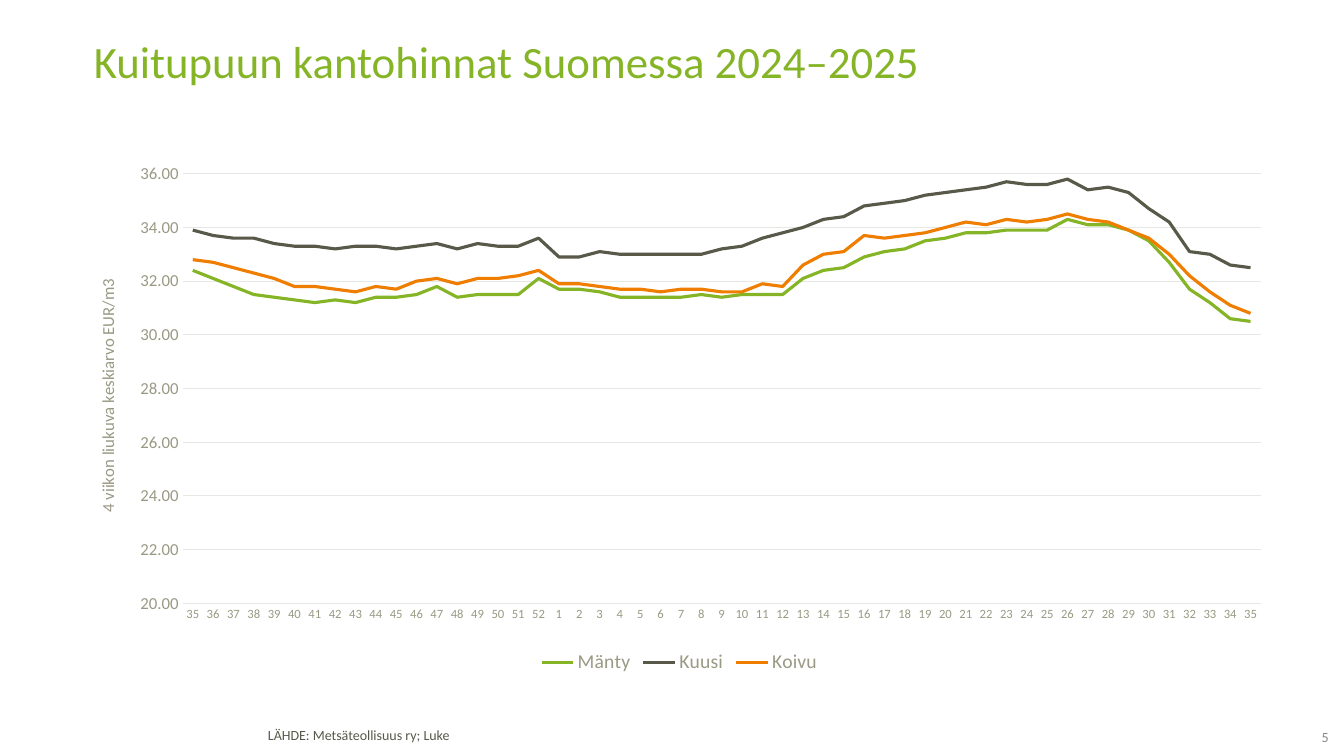
from lxml import etree
from pptx import Presentation
from pptx.chart.data import CategoryChartData
from pptx.dml.color import RGBColor
from pptx.enum.chart import XL_CHART_TYPE, XL_LEGEND_POSITION, XL_TICK_MARK
from pptx.enum.text import MSO_ANCHOR, PP_ALIGN
from pptx.oxml.ns import qn
from pptx.util import Pt

LINE_CHART = XL_CHART_TYPE.LINE
LEGEND_BOTTOM = XL_LEGEND_POSITION.BOTTOM
NO_TICKS = XL_TICK_MARK.NONE
TOP, MIDDLE = MSO_ANCHOR.TOP, MSO_ANCHOR.MIDDLE
LEFT, RIGHT = PP_ALIGN.LEFT, PP_ALIGN.RIGHT

GREEN, DARK, ORANGE = "85B526", "59594A", "EF7D00"
MUTED, GRID, GREY = "999984", "E7E7E3", "878787"

# Weekly prices, from week 35 of 2024 to week 35 of 2025
WEEKS = [str(week) for week in (*range(35, 53), *range(1, 36))]
PRICES = {
    "Mänty": (GREEN, [
        32.4, 32.1, 31.8, 31.5, 31.4, 31.3, 31.2, 31.3, 31.2, 31.4, 31.4, 31.5,
        31.8, 31.4, 31.5, 31.5, 31.5, 32.1, 31.7, 31.7, 31.6, 31.4, 31.4, 31.4,
        31.4, 31.5, 31.4, 31.5, 31.5, 31.5, 32.1, 32.4, 32.5, 32.9, 33.1, 33.2,
        33.5, 33.6, 33.8, 33.8, 33.9, 33.9, 33.9, 34.3, 34.1, 34.1, 33.9, 33.5,
        32.7, 31.7, 31.2, 30.6, 30.5]),
    "Kuusi": (DARK, [
        33.9, 33.7, 33.6, 33.6, 33.4, 33.3, 33.3, 33.2, 33.3, 33.3, 33.2, 33.3,
        33.4, 33.2, 33.4, 33.3, 33.3, 33.6, 32.9, 32.9, 33.1, 33, 33, 33,
        33, 33, 33.2, 33.3, 33.6, 33.8, 34, 34.3, 34.4, 34.8, 34.9, 35,
        35.2, 35.3, 35.4, 35.5, 35.7, 35.6, 35.6, 35.8, 35.4, 35.5, 35.3, 34.7,
        34.2, 33.1, 33, 32.6, 32.5]),
    "Koivu": (ORANGE, [
        32.8, 32.7, 32.5, 32.3, 32.1, 31.8, 31.8, 31.7, 31.6, 31.8, 31.7, 32,
        32.1, 31.9, 32.1, 32.1, 32.2, 32.4, 31.9, 31.9, 31.8, 31.7, 31.7, 31.6,
        31.7, 31.7, 31.6, 31.6, 31.9, 31.8, 32.6, 33, 33.1, 33.7, 33.6, 33.7,
        33.8, 34, 34.2, 34.1, 34.3, 34.2, 34.3, 34.5, 34.3, 34.2, 33.9, 33.6,
        33, 32.2, 31.6, 31.1, 30.8]),
}


def color(hex_value):
    return RGBColor.from_string(hex_value)


def set_layout(parent, index, **values):
    """Give a chart part a manual layout, in fractions of the chart."""
    for old_layout in parent.findall(qn("c:layout")):
        parent.remove(old_layout)
    layout = etree.Element(qn("c:layout"))
    manual = etree.SubElement(layout, qn("c:manualLayout"))
    for name, value in values.items():
        etree.SubElement(manual, qn(f"c:{name}")).set("val", str(value))
    parent.insert(index, layout)


class SlideBuilder:
    font_name = "Calibri"

    def __init__(self, slide):
        self.slide = slide

    def style_font(self, font, size, hex_value):
        font.name = self.font_name
        font.size = Pt(size)
        font.bold = False
        font.color.rgb = color(hex_value)

    def style_line(self, line, width, hex_value):
        line.color.rgb = color(hex_value)
        line.width = Pt(width)

    def fill_text(self, shape, text, size, hex_value, align=LEFT, anchor=TOP,
                  spacing=1.0, insets=(7.2, 3.6, 7.2, 3.6)):
        frame = shape.text_frame
        frame.text = text
        frame.word_wrap = True
        frame.vertical_anchor = anchor
        (frame.margin_left, frame.margin_top,
         frame.margin_right, frame.margin_bottom) = map(Pt, insets)
        paragraph = frame.paragraphs[0]
        paragraph.alignment = align
        paragraph.line_spacing = spacing
        self.style_font(paragraph.runs[0].font, size, hex_value)

    def title(self, text, left, top, width, height):
        shape = self.slide.shapes.title
        shape.left, shape.top = Pt(left), Pt(top)
        shape.width, shape.height = Pt(width), Pt(height)
        self.fill_text(shape, text, 32, GREEN, spacing=0.8)

    def text(self, text, left, top, width, height, hex_value, **options):
        box = self.slide.shapes.add_textbox(
            Pt(left), Pt(top), Pt(width), Pt(height))
        self.fill_text(box, text, 10, hex_value, **options)

    def line_chart(self, weeks, prices, left, top, width, height):
        data = CategoryChartData(number_format="#,##0.00")
        data.categories = weeks
        for name, (_, values) in prices.items():
            data.add_series(name, values)
        chart = self.slide.shapes.add_chart(
            LINE_CHART, Pt(left), Pt(top), Pt(width), Pt(height), data).chart
        chart.has_title = False
        self.style_font(chart.font, 10, DARK)
        plot = chart.plots[0]
        plot.vary_by_categories = False
        for series, (hex_value, _) in zip(plot.series, prices.values()):
            series.smooth = False
            self.style_line(series.format.line, 2.25, hex_value)
        chart.has_legend = True
        chart.legend.position = LEGEND_BOTTOM
        chart.legend.include_in_layout = False
        self.style_font(chart.legend.font, 14, MUTED)
        plot_area = next(chart._chartSpace.iter(qn("c:plotArea")))
        set_layout(plot_area, 0, layoutTarget="inner", xMode="edge",
                   yMode="edge", x=0.083, y=0.03, w=0.905, h=0.826)
        return chart

    def axis(self, axis, size):
        axis.major_tick_mark = axis.minor_tick_mark = NO_TICKS
        self.style_font(axis.tick_labels.font, size, MUTED)

    def axis_title(self, axis, text, x, y):
        axis.has_title = True
        frame = axis.axis_title.text_frame
        frame.text = text
        self.style_font(frame.paragraphs[0].runs[0].font, 12, MUTED)
        body = frame._txBody.find(qn("a:bodyPr"))
        body.set("rot", "-5400000")
        body.set("vert", "horz")
        set_layout(axis.axis_title._element, 1,
                   xMode="edge", yMode="edge", x=x, y=y)


def main():
    presentation = Presentation()
    presentation.slide_width, presentation.slide_height = Pt(960), Pt(540)
    slide = presentation.slides.add_slide(presentation.slide_layouts[5])
    builder = SlideBuilder(slide)

    # Source, page number and title
    builder.text("LÄHDE: Metsäteollisuus ry; Luke", 184.3, 517, 517, 19.4,
                 "58594A", spacing=0.85)
    builder.text("5", 910.8, 521.3, 38.2, 13.7, GREY, align=RIGHT,
                 anchor=MIDDLE, insets=(0, 0, 0, 2.9))
    builder.title("Kuitupuun kantohinnat Suomessa 2024–2025",
                  59.8, 28.1, 841.7, 70.6)

    # Price chart
    chart = builder.line_chart(WEEKS, PRICES, 59.8, 113, 851, 371.5)

    # Week axis
    week_axis = chart.category_axis
    builder.axis(week_axis, 9)
    builder.style_line(week_axis.format.line, 0.75, GRID)

    # Price axis
    price_axis = chart.value_axis
    builder.axis(price_axis, 12)
    price_axis.format.line.fill.background()
    price_axis.minimum_scale, price_axis.maximum_scale = 20, 36
    price_axis.major_unit = 2
    price_axis.tick_labels.number_format = "#,##0.00"
    price_axis.tick_labels.number_format_is_linked = False
    price_axis.has_major_gridlines = True
    builder.style_line(price_axis.major_gridlines.format.line, 0.75, GRID)
    builder.axis_title(price_axis, "4 viikon liukuva keskiarvo EUR/m3",
                       0.008, 0.226)

    presentation.save("out.pptx")


if __name__ == "__main__":
    main()
